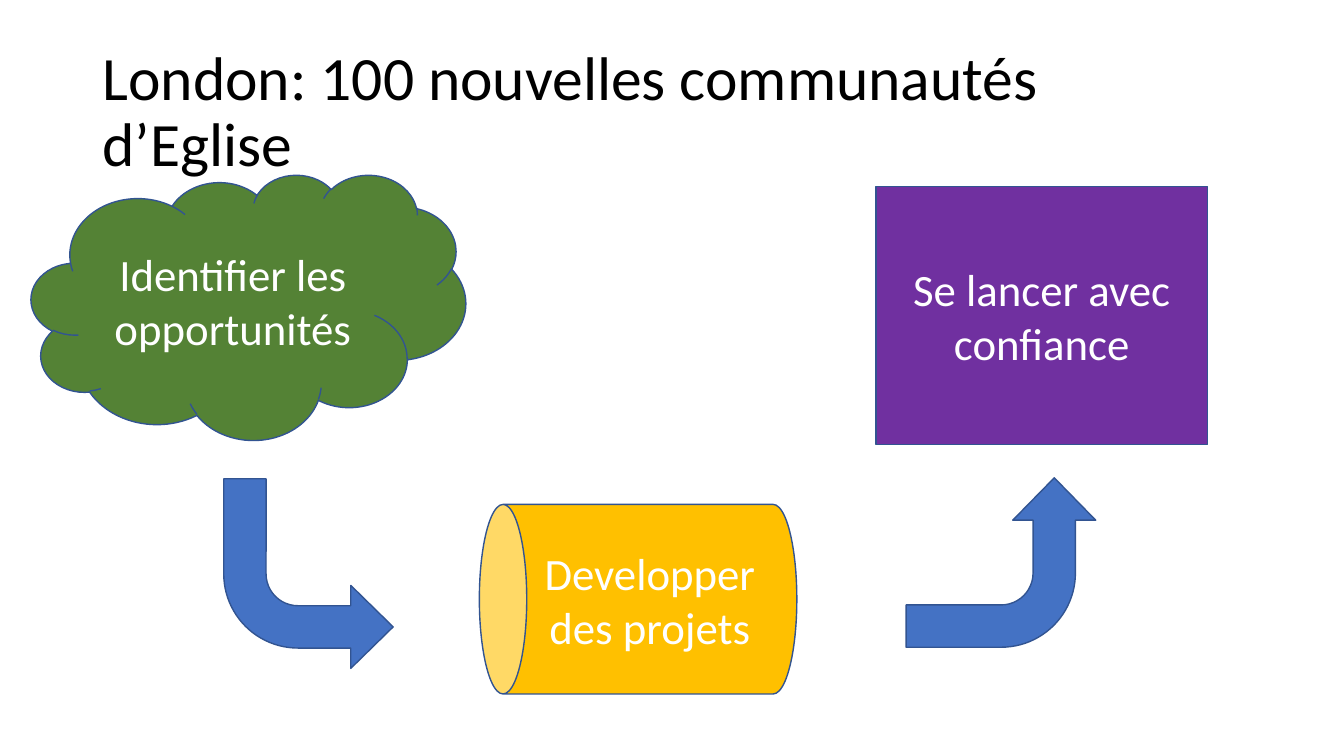
"""Build a slide with three steps towards new church communities."""
from pptx import Presentation
from pptx import util as u
from pptx.dml.color import RGBColor
from pptx.enum import shapes, text

Pt = u.Pt
SHAPE = shapes.MSO_SHAPE


def rgb(value):
    """Return the colour for a hex string."""
    return RGBColor.from_string(value)


def place(sp, left, top, width, height):
    """Set position and size in points."""
    sp.left, sp.top, sp.width, sp.height = map(Pt, (left, top, width, height))


def write(sp, wording, size, color, align):
    """Fill a shape with one vertically centred paragraph."""
    tf = sp.text_frame
    tf.text = wording
    tf.word_wrap = True
    tf.auto_size = text.MSO_AUTO_SIZE.NONE
    tf.vertical_anchor = text.MSO_ANCHOR.MIDDLE
    p = tf.paragraphs[0]
    p.alignment = align
    font = p.runs[0].font
    font.name, font.size = "Calibri", Pt(size)
    font.color.rgb = rgb(color)
    return p


def add_title(s, wording):
    """Move and format the title placeholder."""
    sp = s.shapes.title
    place(sp, 66, 28.8, 828, 104.4)
    p = write(sp, wording, 44, "000000", text.PP_ALIGN.LEFT)
    p.line_spacing = 0.9


def add_block(s, kind, box, fill, rotation=0):
    """Add a filled and outlined preset shape."""
    sp = s.shapes.add_shape(kind, *map(Pt, box))
    sp.shadow.inherit = False
    sp.fill.solid()
    sp.fill.fore_color.rgb = rgb(fill)
    sp.line.color.rgb = rgb("325491")
    sp.line.width = Pt(1)
    sp.rotation = rotation
    return sp


def add_step(s, kind, box, fill, wording, rotation=0):
    """Add a step with its white label."""
    sp = add_block(s, kind, box, fill, rotation)
    write(sp, wording, 32, "FFFFFF", text.PP_ALIGN.CENTER)
    return sp


def add_bent_arrow(s, left, top, rotation):
    """Add a mirrored bent arrow between two steps."""
    sp = add_block(s, SHAPE.BENT_ARROW, (left, top, 121, 135.4), "4472C4", rotation)
    for i, value in enumerate((0.25, 0.245, 0.25, 0.438)):
        sp.adjustments[i] = value
    sp.element.spPr.xfrm.set("flipH", "1")


def main():
    """Build and save the slide."""
    prs = Presentation()
    prs.slide_width, prs.slide_height = Pt(960), Pt(540)
    s = prs.slides.add_slide(prs.slide_layouts[5])
    add_title(s, "London: 100 nouvelles communautés d’Eglise")
    add_step(s, SHAPE.CLOUD, (22.3, 124.6, 310.3, 189.4), "548235",
             "Identifier les opportunités")
    can = add_step(s, SHAPE.CAN, (388.1, 314.6, 135.4, 226.8), "FFC000",
                   "Developper des projets", 270)
    can.text_frame._txBody.bodyPr.set("vert", "vert")
    add_step(s, SHAPE.RECTANGLE, (625.7, 133.2, 236.9, 184.3), "7030A0",
             "Se lancer avec confiance")
    add_bent_arrow(s, 159.8, 342, 180)
    add_bent_arrow(s, 654.5, 334.1, 90)
    prs.save("out.pptx")


if __name__ == "__main__":
    main()
